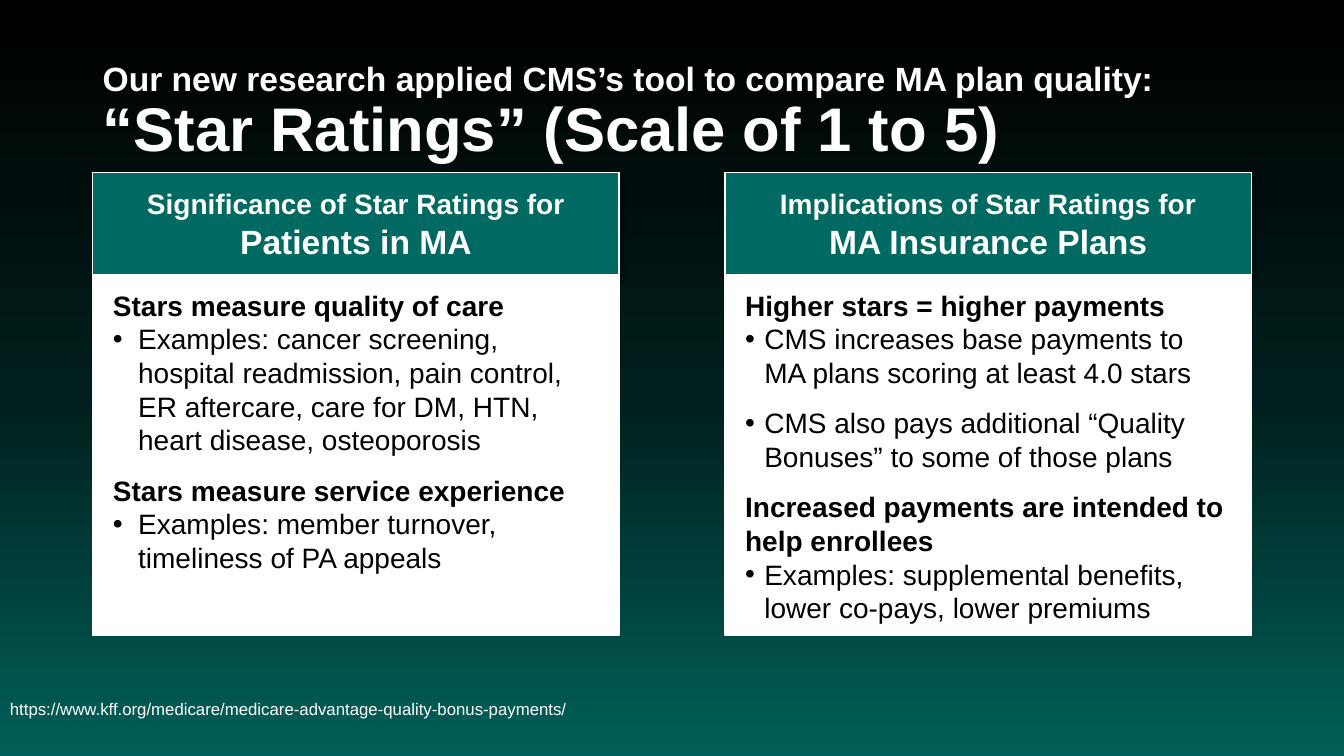
from copy import deepcopy

from lxml import etree
from pptx import Presentation, util as u
from pptx.dml.color import RGBColor
from pptx.enum import shapes, text
from pptx.oxml.ns import qn

COLORS = {"white": "FFFFFF", "black": "000000", "teal": "006961"}
BACKDROP = [(0, "000000"), (0.52, "001E1C"), (1, "006059")]
MARGINS = ("margin_left", "margin_top", "margin_right", "margin_bottom")

# Panel grid, in inches
LEFT, TOP, COLUMN, STEP = 0.92, 1.71, 5.22, 6.27
HEADER, BODY = 1.02, 3.57

# Each body line: text, bulleted, points of space after
PANELS = [
    {
        "heading": ("Significance of Star Ratings for", "Patients in MA"),
        "indent": 0.25,
        "body": [
            ("Stars measure quality of care", False, 0),
            ("Examples: cancer screening, hospital readmission, pain control, "
             "ER aftercare, care for DM, HTN, heart disease, osteoporosis", True, 12),
            ("Stars measure service experience", False, 0),
            ("Examples: member turnover, timeliness of PA appeals", True, 12),
        ],
    },
    {
        "heading": ("Implications of Star Ratings for", "MA Insurance Plans"),
        "indent": 0.19,
        "body": [
            ("Higher stars = higher payments", False, 0),
            ("CMS increases base payments to MA plans scoring at least 4.0 stars", True, 12),
            ("CMS also pays additional “Quality Bonuses” to some of those plans", True, 12),
            ("Increased payments are intended to help enrollees", False, 0),
            ("Examples: supplemental benefits, lower co-pays, lower premiums", True, 0),
        ],
    },
]


def style(font, size, color, bold=False):
    for key, value in {"name": "Arial", "size": u.Pt(size), "bold": bold}.items():
        setattr(font, key, value)
    font.color.rgb = RGBColor.from_string(COLORS[color])


def add_frame(box, fill, anchor, margins):
    """Give a box its fill, white outline and text settings; return its text frame."""
    if fill:
        box.shadow.inherit = False
        box.fill.solid()
        box.fill.fore_color.rgb = RGBColor.from_string(COLORS[fill])
        box.line.color.rgb = RGBColor.from_string(COLORS["white"])
        box.line.width = u.Pt(1)
    frame = box.text_frame
    frame.word_wrap = True
    frame.vertical_anchor = anchor
    for side, margin in zip(MARGINS, margins):
        setattr(frame, side, u.Inches(margin))
    return frame


prs = Presentation()
prs.slide_width, prs.slide_height = u.Inches(13.33), u.Inches(7.5)
slide = prs.slides.add_slide(prs.slide_layouts[6])

# Background gradient, dark at the top
backdrop = slide.background.fill
backdrop.gradient()
backdrop.gradient_angle = 270
last_stop = list(slide.element.iter(qn("a:gs")))[-1]
last_stop.addnext(deepcopy(last_stop))
for stop, (position, color) in zip(backdrop.gradient_stops, BACKDROP):
    stop.position = position
    stop.color.rgb = RGBColor.from_string(color)

# Title and source link
MIDDLE, UPPER = text.MSO_ANCHOR.MIDDLE, text.MSO_ANCHOR.TOP
default_margins = (0.1, 0.05, 0.1, 0.05)
captions = [
    ((LEFT, 0.4, 11.5, 1.45), True,
     [("Our new research applied CMS’s tool to compare MA plan quality:", 24),
      ("“Star Ratings” (Scale of 1 to 5)", 44)]),
    ((0, 6.58, 9, 0.92), False,
     [("https://www.kff.org/medicare/medicare-advantage-quality-bonus-payments/", 12)]),
]
for place, bold, lines in captions:
    box = slide.shapes.add_textbox(*map(u.Inches, place))
    caption = add_frame(box, None, MIDDLE, default_margins).paragraphs[0]
    caption.line_spacing = 0.9
    for i, (words, size) in enumerate(lines):
        if i:
            caption.add_line_break()
        run = caption.add_run()
        run.text = words
        style(run.font, size, "white", bold)

# Two panels, each a header above a body
for column, panel in enumerate(PANELS):
    left = LEFT + column * STEP
    header = slide.shapes.add_shape(
        shapes.MSO_SHAPE.RECTANGLE, *map(u.Inches, (left, TOP, COLUMN, HEADER)))
    frame = add_frame(header, "teal", MIDDLE, (0.19, 0.11, 0.19, 0.11))
    effects = header.element.spPr.find(qn("a:effectLst"))
    shadow = etree.SubElement(
        effects, qn("a:outerShdw"), blurRad=str(u.Pt(4)), dist=str(u.Pt(3)),
        dir=str(45 * 60000), rotWithShape="0")
    shade = etree.SubElement(shadow, qn("a:srgbClr"), val=COLORS["black"])
    etree.SubElement(shade, qn("a:alpha"), val="40000")
    for i, (words, size) in enumerate(zip(panel["heading"], (20, 24))):
        heading = frame.add_paragraph() if i else frame.paragraphs[0]
        heading.text = words
        heading.alignment = text.PP_ALIGN.CENTER
        style(heading.font, size, "white", True)

    body = slide.shapes.add_shape(
        shapes.MSO_SHAPE.RECTANGLE, *map(u.Inches, (left, TOP + HEADER, COLUMN, BODY)))
    frame = add_frame(body, "white", UPPER, (0.2, 0.13, 0.2, 0.19))
    for i, (words, bulleted, after) in enumerate(panel["body"]):
        point = frame.add_paragraph() if i else frame.paragraphs[0]
        point.text = words
        point.alignment = text.PP_ALIGN.LEFT
        point.space_after = u.Pt(after)
        if bulleted:
            props = point._p.get_or_add_pPr()
            props.set("marL", str(u.Inches(panel["indent"])))
            props.set("indent", str(-u.Inches(panel["indent"])))
            etree.SubElement(props, qn("a:buFont"), typeface="Arial")
            etree.SubElement(props, qn("a:buChar"), char="•")
        style(point.font, 20, "black", not bulleted)

prs.save("out.pptx")
